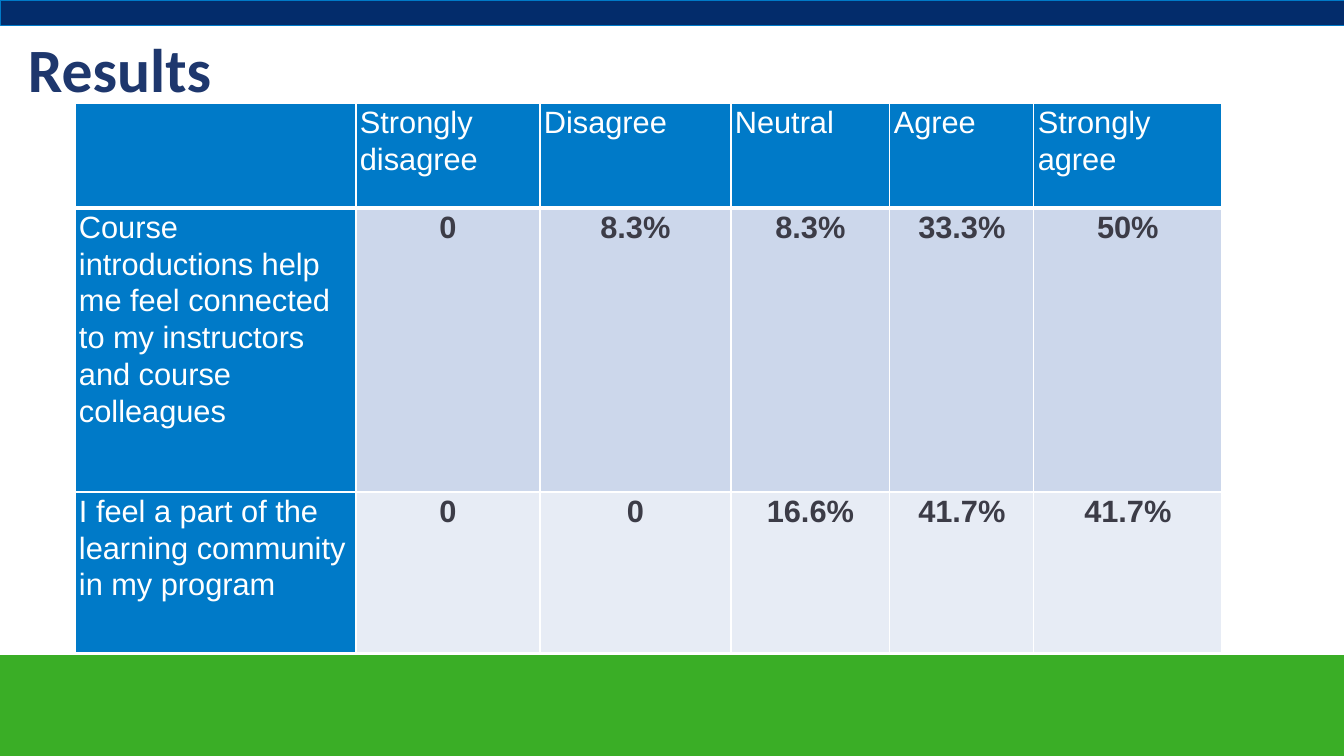
from lxml.etree import SubElement
from pptx import Presentation
from pptx.dml.color import RGBColor
from pptx.enum.shapes import MSO_SHAPE
from pptx.enum.text import MSO_ANCHOR, PP_ALIGN
from pptx.oxml.ns import qn
from pptx.util import Emu, Pt

NAVY = RGBColor(0x03, 0x2C, 0x6B)
TITLE_BLUE = RGBColor(0x1E, 0x37, 0x6D)
BLUE = RGBColor(0x00, 0x7A, 0xC8)
GREEN = RGBColor(0x3A, 0xAE, 0x26)
WHITE = RGBColor(0xFF, 0xFF, 0xFF)
DARK = RGBColor(0x3C, 0x3C, 0x47)
BANDS = [RGBColor(0xCC, 0xD7, 0xEB), RGBColor(0xE7, 0xEC, 0xF5)]

SLIDE_W, SLIDE_H = 1344, 756
COL_WIDTHS = [281, 184, 191, 159, 144, 188]
ROW_HEIGHTS = [105, 284, 161]
ROWS = [
    ["", "Strongly disagree", "Disagree", "Neutral", "Agree", "Strongly\nagree"],
    ["Course introductions help me feel connected to my instructors "
     "and course colleagues", "0", "8.3%", "8.3%", "33.3%", "50%"],
    ["I feel a part of the learning community in my program",
     "0", "0", "16.6%", "41.7%", "41.7%"],
]


def px(n):
    return Emu(round(n * 914400 / 100.8))


def add_bar(s, top, height, color, line=None):
    sp = s.shapes.add_shape(MSO_SHAPE.RECTANGLE, 0, px(top), px(SLIDE_W), px(height))
    sp.shadow.inherit = False
    sp.fill.solid()
    sp.fill.fore_color.rgb = color
    if line is None:
        sp.line.fill.background()
    else:
        sp.line.color.rgb = line
        sp.line.width = Pt(0.5)


def add_run(p, text, font, size, color, bold):
    r = p.add_run()
    r.text = text
    r.font.name = font
    r.font.size = Pt(size)
    r.font.color.rgb = color
    r.font.bold = bold


def add_title(s, text):
    sp = s.shapes.add_textbox(px(18), 0, px(1159), px(146))
    tf = sp.text_frame
    tf.word_wrap = True
    tf.vertical_anchor = MSO_ANCHOR.MIDDLE
    p = tf.paragraphs[0]
    p.line_spacing = 0.9
    add_run(p, text, "Calibri", 44, TITLE_BLUE, True)


def set_borders(cell, bottom):
    """Draw white cell borders, 1 pt wide except for the bottom one."""
    tc_pr = cell._tc.get_or_add_tcPr()
    for side, width in (("L", 1), ("R", 1), ("T", 1), ("B", bottom)):
        ln = SubElement(tc_pr, qn(f"a:ln{side}"), w=str(Pt(width)))
        fill = SubElement(ln, qn("a:solidFill"))
        SubElement(fill, qn("a:srgbClr"), val=str(WHITE))


def fill_cell(cell, text, row, col):
    is_label = row == 0 or col == 0
    set_borders(cell, bottom=3 if row == 0 else 1)
    cell.fill.solid()
    cell.fill.fore_color.rgb = BLUE if is_label else BANDS[row - 1]
    cell.margin_left = cell.margin_right = px(4)
    cell.margin_top = cell.margin_bottom = 0
    tf = cell.text_frame
    for i, line in enumerate(text.split("\n") if text else []):
        p = tf.add_paragraph() if i else tf.paragraphs[0]
        p.line_spacing = 1.07
        p.alignment = PP_ALIGN.LEFT if is_label else PP_ALIGN.CENTER
        add_run(p, line, "Arial", 22, WHITE if is_label else DARK, not is_label)


def add_results_table(s):
    table = s.shapes.add_table(
        len(ROW_HEIGHTS), len(COL_WIDTHS), px(75), px(103),
        px(sum(COL_WIDTHS)), px(sum(ROW_HEIGHTS))).table
    table.first_row = table.horz_banding = False
    for column, width in zip(table.columns, COL_WIDTHS):
        column.width = px(width)
    for row, height in zip(table.rows, ROW_HEIGHTS):
        row.height = px(height)
    for i, texts in enumerate(ROWS):
        for j, text in enumerate(texts):
            fill_cell(table.cell(i, j), text, i, j)


def main():
    prs = Presentation()
    prs.slide_width, prs.slide_height = px(SLIDE_W), px(SLIDE_H)
    s = prs.slides.add_slide(prs.slide_layouts[6])
    add_bar(s, 655, 101, GREEN)
    add_bar(s, 0, 25, NAVY, BLUE)
    add_title(s, "Results")
    add_results_table(s)
    prs.save("out.pptx")


if __name__ == "__main__":
    main()
